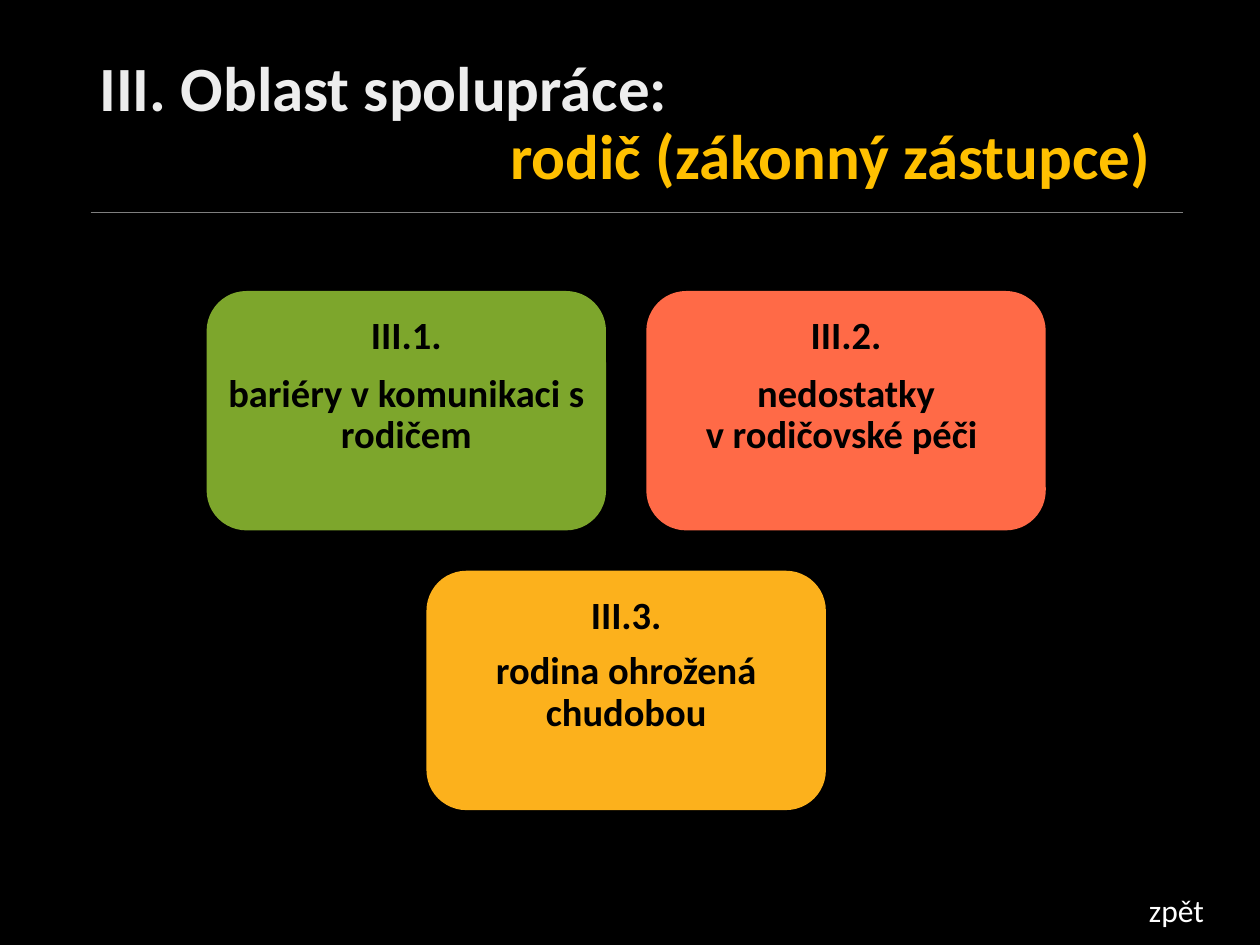
from lxml.etree import SubElement
from pptx import Presentation
from pptx.dml.color import RGBColor as RGB
from pptx.enum.shapes import MSO_CONNECTOR as CONN, MSO_SHAPE as SHAPE
from pptx.enum.text import MSO_ANCHOR as ANCHOR, PP_ALIGN as ALIGN
from pptx.oxml.ns import qn
from pptx.util import Inches, Pt

COLORS = {
    "bg": "000000", "title": "EDEDED", "accent": "FFC000", "rule": "7F7F7F",
    "link": "FFFFFF", "card": "000000",
    "green": "7DA62C", "coral": "FF6A47", "amber": "FCB11C",
}
TITLE = ["III. Oblast spolupráce:", "rodič (zákonný zástupce)"]
BACK = "zpět"
ROWS = [
    [("green", 9.2, ["III.1.", "bariéry v komunikaci s rodičem"]),
     ("coral", 9.2, ["III.2.", "nedostatky", "v rodičovské péči "])],
    [("amber", 7.7, ["III.3.", "rodina ohrožená chudobou"])],
]
CARD_W, CARD_H, GAP = 3.17, 1.9, 0.32
CENTER_X, GRID_TOP = 4.97, 2.31


def rgb(name):
    return RGB.from_string(COLORS[name])


def add_text(tf, text, color, size, bold=True, align=ALIGN.LEFT,
             spacing=0.9, after=0, first=False):
    p = tf.paragraphs[0] if first else tf.add_paragraph()
    p.alignment, p.line_spacing = align, spacing
    p.space_before, p.space_after = Pt(0), Pt(after)
    r = p.add_run()
    r.text = text
    r.font.name, r.font.size, r.font.bold = "Calibri", Pt(size), bold
    r.font.color.rgb = rgb(color)


def add_box(slide, x, y, w, h, wrap=True):
    tf = slide.shapes.add_textbox(*map(Inches, (x, y, w, h))).text_frame
    tf.word_wrap = wrap
    return tf


def add_card(slide, x, y, fill, after, lines):
    sp = slide.shapes.add_shape(SHAPE.FLOWCHART_ALTERNATE_PROCESS,
                                *map(Inches, (x, y, CARD_W, CARD_H)))
    sp.shadow.inherit = False
    sp.fill.solid()
    sp.fill.fore_color.rgb = rgb(fill)
    sp.line.fill.background()
    tf = sp.text_frame
    tf.word_wrap, tf.vertical_anchor = True, ANCHOR.TOP
    tf.margin_left = tf.margin_right = tf.margin_bottom = 0
    tf.margin_top = Inches(0.11)
    for i, text in enumerate(lines):
        add_text(tf, text, "card", 22, align=ALIGN.CENTER,
                 after=0 if i else after, first=i == 0)


def main():
    prs = Presentation()
    prs.slide_width, prs.slide_height = Inches(10), Inches(7.5)
    slide = prs.slides.add_slide(prs.slide_layouts[6])
    slide.background.fill.solid()
    slide.background.fill.fore_color.rgb = rgb("bg")

    tf = add_box(slide, 0.69, 0.4, 8.62, 1.45)
    tf.margin_right = Inches(0.18)
    add_text(tf, TITLE[0], "title", 36, first=True)
    add_text(tf, TITLE[1], "accent", 36, align=ALIGN.RIGHT)

    rule = slide.shapes.add_connector(
        CONN.STRAIGHT, *map(Inches, (0.72, 1.69, 9.39, 1.69)))
    rule.line.color.rgb, rule.line.width = rgb("rule"), Pt(0.5)
    SubElement(rule._element.spPr, qn("a:effectLst"))

    for row, cards in enumerate(ROWS):
        width = len(cards) * (CARD_W + GAP) - GAP
        for col, card in enumerate(cards):
            add_card(slide, CENTER_X - width / 2 + col * (CARD_W + GAP),
                     GRID_TOP + row * (CARD_H + GAP), *card)

    tf = add_box(slide, 9.02, 7.02, 0.79, 0.4, wrap=False)
    add_text(tf, BACK, "link", 18, bold=False, spacing=1.0, first=True)
    prs.save("out.pptx")


if __name__ == "__main__":
    main()
